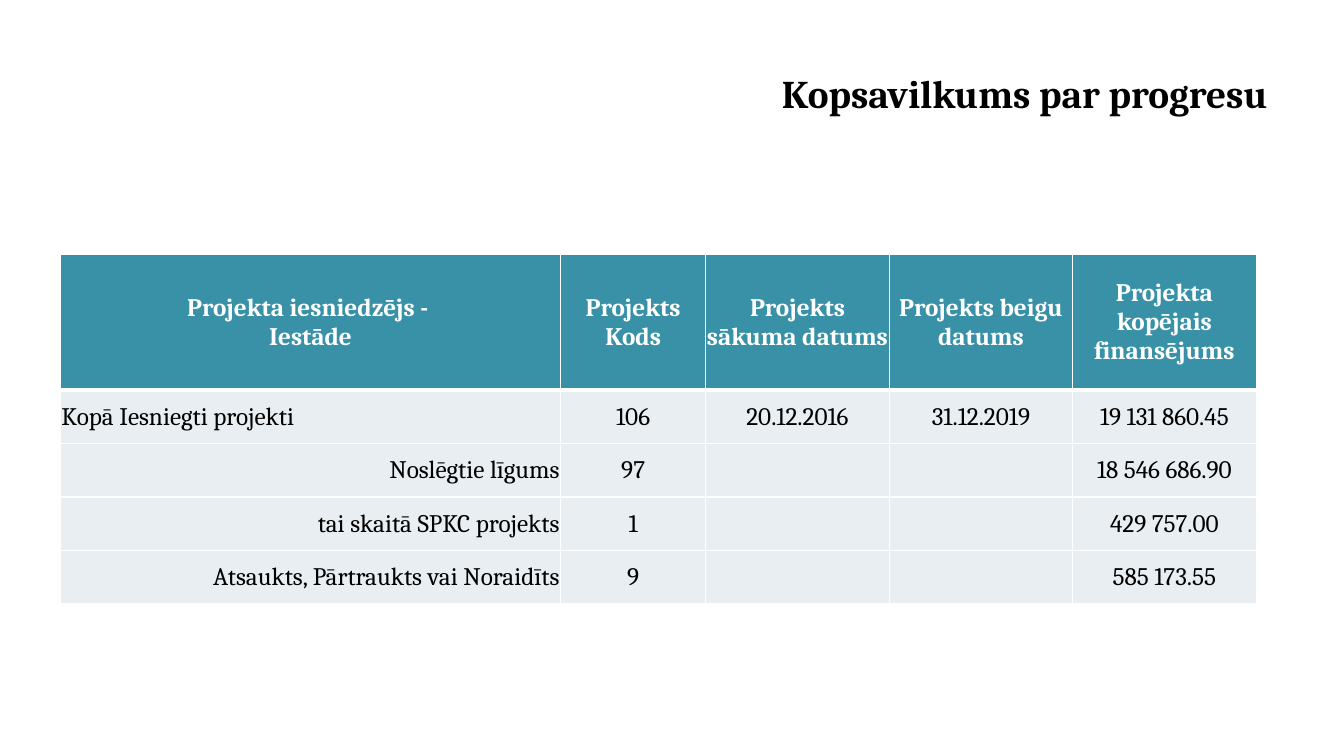
from lxml import etree
from pptx import Presentation
from pptx.dml.color import RGBColor
from pptx.enum import text as t
from pptx.oxml import ns
from pptx.util import Inches, Pt

TITLE = "Kopsavilkums par progresu"
HEAD = ["Projekta iesniedzējs - \vIestāde", "Projekts Kods", "Projekts sākuma datums",
        "Projekts beigu datums", "Projekta kopējais finansējums"]
ROWS = [
    ["Kopā Iesniegti projekti", "106", "20.12.2016", "31.12.2019", "19 131 860.45"],
    ["Noslēgtie līgums", "97", "", "", "18 546 686.90"],
    ["tai skaitā SPKC projekts", "1", "", "", "429 757.00"],
    ["Atsaukts, Pārtraukts vai Noraidīts", "9", "", "", "585 173.55"],
]
WIDTHS = [4.96, 1.44, 1.82, 1.82, 1.82]
HEIGHTS = [1.35] + [0.53] * len(ROWS)
FONT = "Cambria"
TEAL, PALE, WHITE, BLACK = "3891A7", "E8EEF1", "FFFFFF", "000000"
LEFT, CENTER, RIGHT = t.PP_ALIGN.LEFT, t.PP_ALIGN.CENTER, t.PP_ALIGN.RIGHT


def paint(color, hue):
    color.rgb = RGBColor.from_string(hue)


def write(frame, words, size=18, hue=BLACK, bold=False, align=CENTER):
    frame.text = words
    frame.word_wrap = True
    for para in frame.paragraphs:
        para.alignment = align
        para.font.size = Pt(size)
        for run in para.runs:
            font = run.font
            font.name, font.size, font.bold = FONT, Pt(size), bold
            paint(font.color, hue)


def edge(cell, top, base):
    props = cell._tc.get_or_add_tcPr()
    sides = [("L", 1), ("R", 1), ("T", top), ("B", base)]
    for spot, (side, width) in enumerate(sides):
        line = etree.Element(ns.qn("a:ln" + side), w=str(Pt(width)))
        fill = etree.SubElement(line, ns.qn("a:solidFill"))
        etree.SubElement(fill, ns.qn("a:srgbClr"), val=WHITE)
        props.insert(spot, line)


def fill_cell(cell, words, row, col):
    head = row == 0
    align = CENTER if head or col else LEFT if row == 1 else RIGHT
    cell.margin_left = cell.margin_right = cell.margin_top = Inches(0.01)
    cell.margin_bottom = 0
    cell.vertical_anchor = t.MSO_ANCHOR.MIDDLE
    cell.fill.solid()
    paint(cell.fill.fore_color, TEAL if head else PALE)
    write(cell.text_frame, words, hue=WHITE if head else BLACK, bold=head, align=align)
    edge(cell, 3 if row == 1 else 1, 3 if head else 1)


def main():
    deck = Presentation()
    deck.slide_width, deck.slide_height = Inches(13.33), Inches(7.5)
    slide = deck.slides.add_slide(deck.slide_layouts[5])

    title = slide.shapes.title
    title.left, title.top = Inches(2.67), Inches(0.3)
    title.width, title.height = Inches(10), Inches(1.25)
    title.text_frame.vertical_anchor = t.MSO_ANCHOR.MIDDLE
    write(title.text_frame, TITLE, size=28, bold=True, align=RIGHT)

    data = [HEAD] + ROWS
    table = slide.shapes.add_table(
        len(data), len(HEAD), Inches(0.6), Inches(2.52),
        Inches(sum(WIDTHS)), Inches(sum(HEIGHTS))).table
    for col, width in enumerate(WIDTHS):
        table.columns[col].width = Inches(width)
    for row, items in enumerate(data):
        table.rows[row].height = Inches(HEIGHTS[row])
        for col, words in enumerate(items):
            fill_cell(table.cell(row, col), words, row, col)

    deck.save("out.pptx")


if __name__ == "__main__":
    main()
